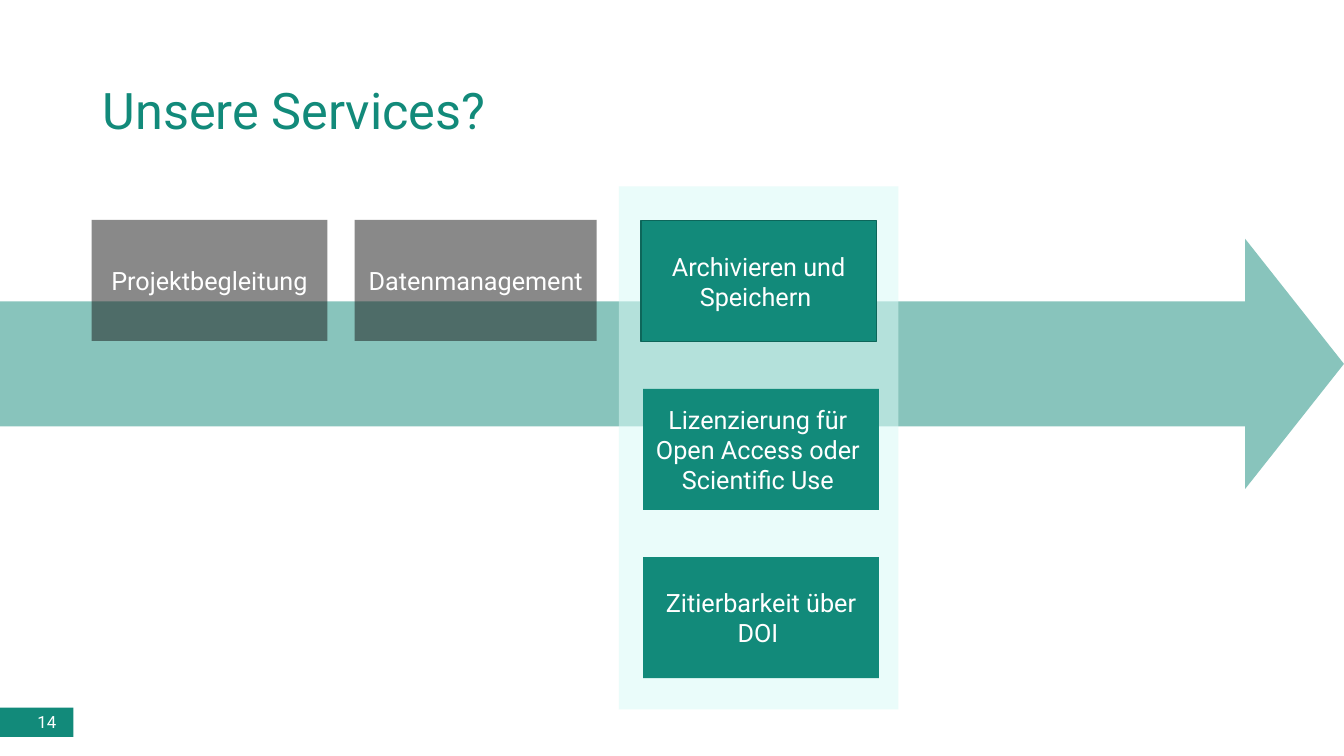
from lxml import etree
from pptx import Presentation
from pptx.dml.color import RGBColor
from pptx.enum.shapes import MSO_SHAPE
from pptx.enum.text import MSO_ANCHOR, PP_ALIGN
from pptx.oxml.ns import qn
from pptx.util import Cm, Pt

RECTANGLE = MSO_SHAPE.RECTANGLE
RIGHT_ARROW = MSO_SHAPE.RIGHT_ARROW
MIDDLE = MSO_ANCHOR.MIDDLE
LEFT, CENTER, RIGHT = PP_ALIGN.LEFT, PP_ALIGN.CENTER, PP_ALIGN.RIGHT

TEAL = RGBColor(0x12, 0x8A, 0x7A)
DARK_TEAL = RGBColor(0x0D, 0x66, 0x5A)
PALE_TEAL = RGBColor(0xD9, 0xFA, 0xF6)
CHARCOAL = RGBColor(0x15, 0x15, 0x15)
WHITE = RGBColor(0xFF, 0xFF, 0xFF)

FONT = "Roboto"
SLIDE_WIDTH, SLIDE_HEIGHT = 33.87, 19.05
SERVICE_WIDTH, SERVICE_HEIGHT = 5.94, 3.05


def add_block(slide, kind, box, color, opacity=100):
    block = slide.shapes.add_shape(kind, *map(Cm, box))
    block.shadow.inherit = False
    block.fill.solid()
    block.fill.fore_color.rgb = color
    block.line.fill.background()
    if opacity < 100:
        tint = block.fill._xPr.find(qn("a:solidFill"))[0]
        etree.SubElement(tint, qn("a:alpha"), val=str(opacity * 1000))
    return block


def write(holder, text, size, color=WHITE, align=CENTER):
    frame = holder.text_frame
    frame.word_wrap = True
    frame.vertical_anchor = MIDDLE
    frame.text = text
    paragraph = frame.paragraphs[0]
    paragraph.alignment = align
    for run in paragraph.runs:
        run.font.name = FONT
        run.font.size = Pt(size)
        run.font.color.rgb = color
    return paragraph


def add_service(slide, text, box, color, opacity=100):
    service = add_block(slide, RECTANGLE, box, color, opacity)
    write(service, text, 18)
    return service


def add_page_number(slide, number, box):
    badge = add_block(slide, RECTANGLE, box, TEAL)
    write(badge, number, 12, align=RIGHT)
    badge.text_frame.margin_left = 0
    badge.text_frame.margin_right = Cm(0.43)


def add_process_arrow(slide, box):
    arrow = add_block(slide, RIGHT_ARROW, box, TEAL, 50)
    arrow.adjustments[0] = 0.5
    arrow.adjustments[1] = 0.395


def add_title(slide, text, box):
    title = slide.shapes.add_textbox(*map(Cm, box))
    write(title, text, 36, TEAL, LEFT).line_spacing = 0.9


def add_earlier_services(slide, left, top):
    gap = 0.69
    services = [("Projektbegleitung", SERVICE_WIDTH), ("Datenmanagement", 6.1)]
    for text, width in services:
        add_service(slide, text, (left, top, width, SERVICE_HEIGHT), CHARCOAL, 50)
        left += width + gap


def add_archive_services(slide, box):
    left, top, _, _ = box
    pitch = 4.24
    add_block(slide, RECTANGLE, box, PALE_TEAL, 55)
    services = [
        ("Archivieren und Speichern ", 0.55),
        ("Lizenzierung für \vOpen Access oder \vScientific Use ", 0.61),
        ("Zitierbarkeit über DOI ", 0.61),
    ]
    blocks = [
        add_service(
            slide, text,
            (left + indent, top + 0.86 + row * pitch, SERVICE_WIDTH, SERVICE_HEIGHT),
            TEAL,
        )
        for row, (text, indent) in enumerate(services)
    ]
    archiving = blocks[0]
    archiving.line.color.rgb = DARK_TEAL
    archiving.line.width = Pt(1)


def main():
    deck = Presentation()
    deck.slide_width, deck.slide_height = Cm(SLIDE_WIDTH), Cm(SLIDE_HEIGHT)
    slide = deck.slides.add_slide(deck.slide_layouts[6])
    add_page_number(slide, "14", (0, 17.83, 1.85, 0.74))
    add_process_arrow(slide, (0, 6.02, SLIDE_WIDTH, 6.3))
    add_title(slide, "Unsere Services?", (2.34, 1.02, 26.54, 3.68))
    add_earlier_services(slide, 2.31, 5.54)
    add_archive_services(slide, (15.6, 4.7, 7.04, 13.18))
    deck.save("out.pptx")


if __name__ == "__main__":
    main()
